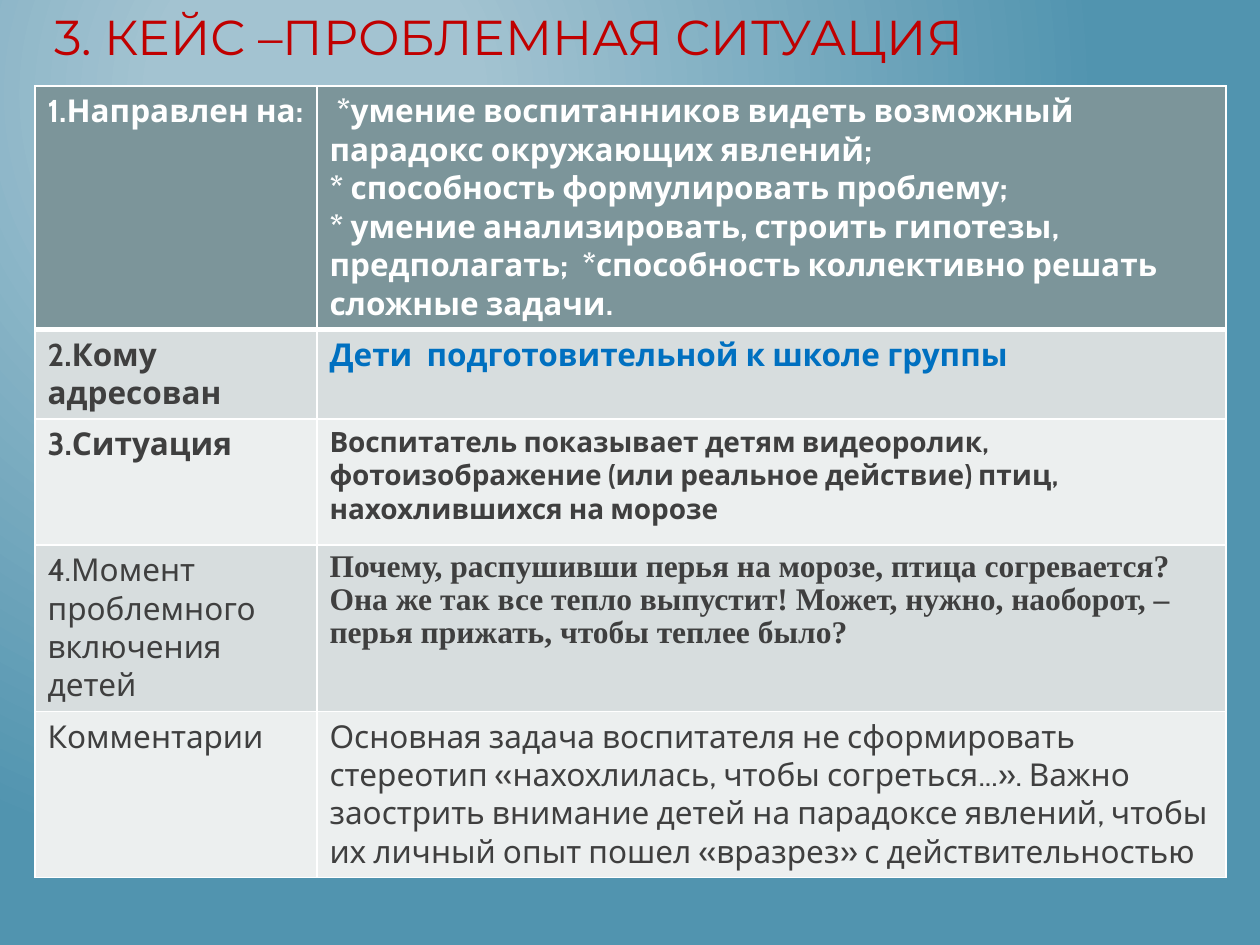
from dataclasses import dataclass

from lxml import etree
from pptx import Presentation
from pptx import util as u
from pptx.dml.color import RGBColor
from pptx.enum import text
from pptx.oxml.ns import qn


@dataclass(frozen=True)
class Theme:
    light: str = "A3C3D1"
    deep: str = "5194AF"
    title: str = "C00000"
    header: str = "7C959A"
    bands: tuple = ("ECEFEF", "D7DDDE")
    white: str = "FFFFFF"
    ink: str = "3F3F3F"
    accent: str = "0070C0"
    title_font: str = "Montserrat"
    body_font: str = "Cabin"
    quote_font: str = "Times New Roman"
    title_size: int = 28
    body_size: int = 18
    small_size: int = 16


THEME = Theme()

ROWS = [
    (169, ("1.Направлен на:", {"bold": True, "color": THEME.white}),
     (" *умение воспитанников видеть возможный парадокс окружающих явлений;\n"
      "* способность формулировать проблему;\n"
      "* умение анализировать, строить гипотезы, предполагать;  "
      "*способность коллективно решать сложные задачи.",
      {"bold": True, "color": THEME.white})),
    (69, ("2.Кому адресован", {"bold": True}),
     ("Дети  подготовительной к школе группы", {"bold": True, "color": THEME.accent})),
    (126, ("3.Ситуация", {"bold": True}),
     ("Воспитатель показывает детям видеоролик, фотоизображение "
      "(или реальное действие) птиц, нахохлившихся на морозе",
      {"bold": True, "size": THEME.small_size})),
    (126, ("4.Момент проблемного включения детей", {}),
     ("Почему, распушивши перья на морозе, птица согревается? Она же так все тепло "
      "выпустит! Может, нужно, наоборот, – перья прижать, чтобы теплее было?",
      {"bold": True, "font": THEME.quote_font, "spacing": 0.95})),
    (126, ("Комментарии", {}),
     ("Основная задача воспитателя не сформировать стереотип «нахохлилась, чтобы "
      "согреться...». Важно заострить внимание детей на парадоксе явлений, чтобы "
      "их личный опыт пошел «вразрез» с действительностью", {})),
]


def px(length):
    return u.Emu(round(length * 914400 / 126))


def write(frame, content, size=THEME.body_size, font=THEME.body_font,
          color=THEME.ink, bold=False, spacing=None):
    for index, line in enumerate(content.split("\n")):
        paragraph = frame.add_paragraph() if index else frame.paragraphs[0]
        paragraph.alignment = text.PP_ALIGN.LEFT
        paragraph.line_spacing = spacing
        run = paragraph.add_run()
        run.text = line
        run.font.size = u.Pt(size)
        run.font.name = font
        run.font.bold = bold
        run.font.color.rgb = RGBColor.from_string(color)


def paint_background(slide):
    fill = slide.background.fill
    fill.gradient()
    for stop, color, position in zip(fill.gradient_stops, (THEME.light, THEME.deep), (0.2, 1)):
        stop.color.rgb = RGBColor.from_string(color)
        stop.position = position
    gradient = slide.element.find(".//" + qn("a:gradFill"))
    linear = gradient.find(qn("a:lin"))
    radial = etree.Element(qn("a:path"), {"path": "circle"})
    etree.SubElement(radial, qn("a:fillToRect"), l="50000", t="20000", r="100000", b="100000")
    gradient.replace(linear, radial)


def place_title(slide, left, top, width, height):
    title = slide.shapes.title
    title.left, title.top, title.width, title.height = map(px, (left, top, width, height))
    frame = title.text_frame
    frame.margin_left = frame.margin_right = 0
    frame.word_wrap = True
    frame.auto_size = text.MSO_AUTO_SIZE.NONE
    frame.vertical_anchor = text.MSO_ANCHOR.TOP
    write(frame, "3. КЕЙС –ПРОБЛЕМНАЯ СИТУАЦИЯ", THEME.title_size, THEME.title_font, THEME.title)


def set_borders(cell, bottom, top):
    properties = cell._tc.get_or_add_tcPr()
    edges = (("lnL", 1), ("lnR", 1), ("lnT", top), ("lnB", bottom))
    for position, (edge, points) in enumerate(edges):
        line = etree.Element(qn("a:" + edge), w=str(u.Pt(points)))
        solid = etree.SubElement(line, qn("a:solidFill"))
        etree.SubElement(solid, qn("a:srgbClr"), val=THEME.white)
        properties.insert(position, line)


def place_table(slide, left, top, width, height):
    shape = slide.shapes.add_table(len(ROWS), 2, *map(px, (left, top, width, height)))
    table = shape.table
    label_width = 282
    table.columns[0].width = px(label_width)
    table.columns[1].width = px(width - label_width)
    for index, (row_height, *contents) in enumerate(ROWS):
        table.rows[index].height = px(row_height)
        for cell, (content, style) in zip(table.rows[index].cells, contents):
            color = THEME.bands[index % 2] if index else THEME.header
            cell.fill.solid()
            cell.fill.fore_color.rgb = RGBColor.from_string(color)
            set_borders(cell, bottom=1 if index else 3, top=3 if index == 1 else 1)
            write(cell.text_frame, content, **style)
    shape.height = px(height)


def main():
    presentation = Presentation()
    presentation.slide_width, presentation.slide_height = px(1260), px(945)
    slide = presentation.slides.add_slide(presentation.slide_layouts[0])
    subtitle = slide.placeholders[1].element
    subtitle.getparent().remove(subtitle)
    paint_background(slide)
    place_title(slide, 54, 0, 1191, 66)
    place_table(slide, 35, 86, 1191, 688)
    presentation.save("out.pptx")


if __name__ == "__main__":
    main()
